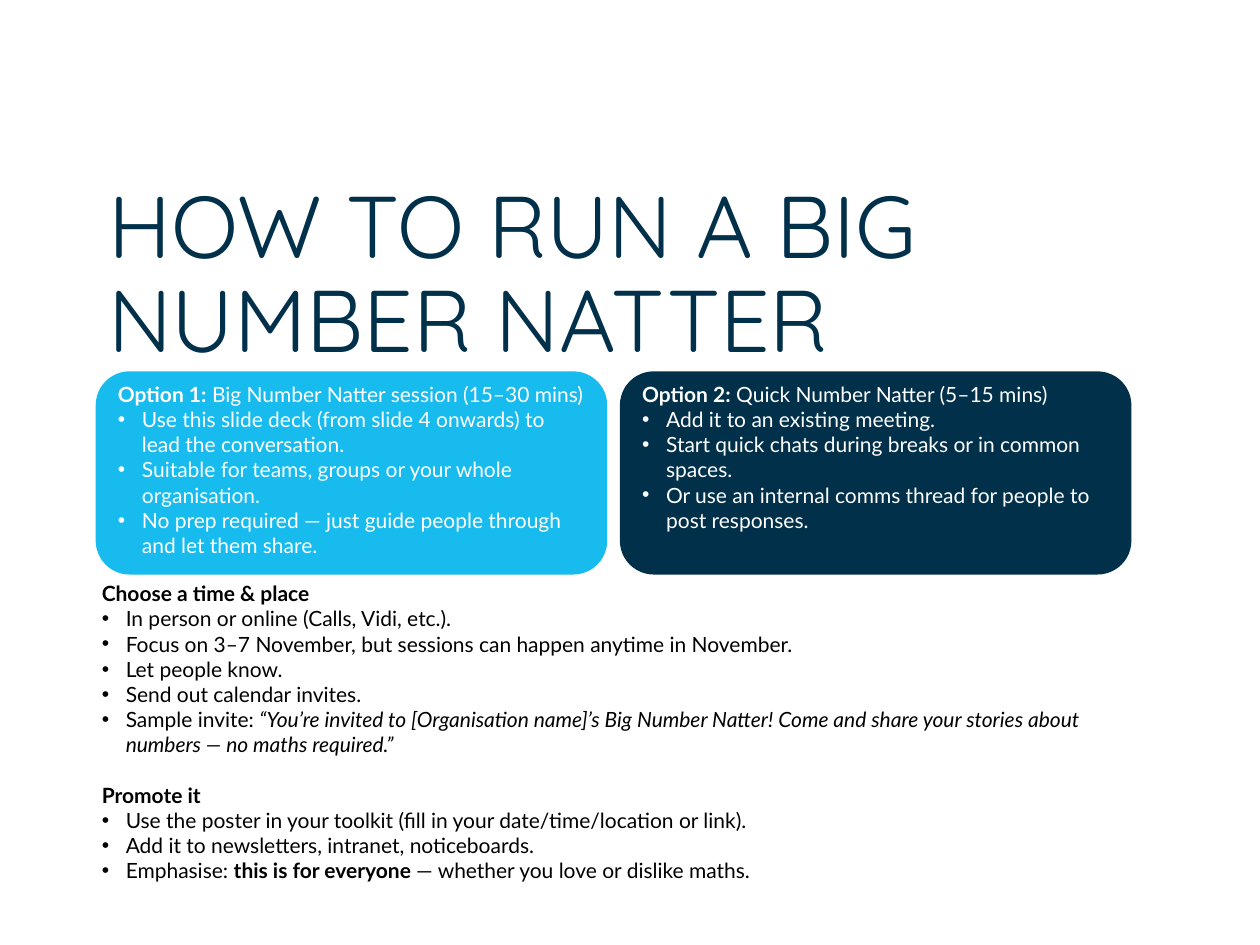
import pptx
import pptx.util
import pptx.dml.color
import pptx.enum.shapes
import pptx.enum.text
import pptx.oxml.ns
import lxml.etree

WIDE, HIGH = 10, 7.5
LEFT, TOP = 0.076, 0.393  # first card, as shares of the slide
CARD, GAP, DEEP = 0.406, 0.01, 0.215
HUES = {"navy": "00304A", "deep": "01304A", "sky": "17BBEE",
        "white": "FFFFFF", "black": "000000"}

# Each paragraph is a list of (text, style) runs; "b" is bold, "i" italic.
CARDS = [
    ("sky", [("Option 1:", "b"), (" Big Number Natter session (15–30 mins)", "")],
     ["Use this slide deck (from slide 4 onwards) to lead the conversation.",
      "Suitable for teams, groups or your whole organisation.",
      "No prep required — just guide people through and let them share."]),
    ("deep", [("Option 2:", "b"), (" Quick Number Natter (5–15 mins)", "")],
     ["Add it to an existing meeting.",
      "Start quick chats during breaks or in common spaces.",
      "Or use an internal comms thread for people to post responses."]),
]
STEPS = [
    ([("Choose a time & place", "b")],
     ["In person or online (Calls, Vidi, etc.).",
      "Focus on 3–7 November, but sessions can happen anytime in November.",
      "Let people know.",
      "Send out calendar invites.",
      [("Sample invite: ", ""),
       ("“You’re invited to [Organisation name]’s Big Number Natter! Come and "
        "share your stories about numbers — no maths required.”", "i")]]),
    ([("Promote it", "b")],
     ["Use the poster in your toolkit (fill in your date/time/location or link).",
      "Add it to newsletters, intranet, noticeboards.",
      [("Emphasise: ", ""), ("this is for everyone ", "b"),
       ("— whether you love or dislike maths.", "")]]),
]


def paint(name):
    return pptx.dml.color.RGBColor.from_string(HUES[name])


def place(x, y, w, h):
    """Turn shares of the slide into lengths."""
    return [pptx.util.Inches(n * side)
            for n, side in zip((x, y, w, h), (WIDE, HIGH) * 2)]


def mark(para):
    """Give a paragraph a hanging bullet."""
    props = para._p.get_or_add_pPr()
    hang = pptx.util.Inches(0.19)
    props.set("marL", str(hang))
    props.set("indent", str(-hang))
    tags = [("buFont", "typeface", "Arial"), ("buChar", "char", "•")]
    for tag, key, value in tags:
        item = lxml.etree.SubElement(props, pptx.oxml.ns.qn("a:" + tag))
        item.set(key, value)


def write(frame, runs, size=12, font="Lato", hue="black", dot=False,
          before=0, line=None):
    """Add one paragraph, using the frame's empty first one if it is free."""
    para = frame.paragraphs[0]
    if para.runs:
        para = frame.add_paragraph()
    if dot:
        mark(para)
    para.alignment = pptx.enum.text.PP_ALIGN.LEFT
    para.space_before = pptx.util.Pt(before)
    if line:
        para.line_spacing = line
    for text, style in [(runs, "")] if isinstance(runs, str) else runs:
        run = para.add_run()
        run.text = text
        run.font.size = pptx.util.Pt(size)
        run.font.name = font
        run.font.color.rgb = paint(hue)
        run.font.bold = style == "b"
        run.font.italic = style == "i"


def block(frame, head, items, before=0, hue="black"):
    """Write a heading and its bullets."""
    write(frame, head, before=before, hue=hue)
    for item in items:
        write(frame, item, dot=True, hue=hue)


def box(slide, *share):
    frame = slide.shapes.add_textbox(*place(*share)).text_frame
    frame.word_wrap = True
    return frame


def card(slide, col, fill, head, items):
    kind = pptx.enum.shapes.MSO_SHAPE.ROUNDED_RECTANGLE
    spot = place(LEFT + col * (CARD + GAP), TOP, CARD, DEEP)
    shape = slide.shapes.add_shape(kind, *spot)
    shape.shadow.inherit = False
    shape.fill.solid()
    shape.fill.fore_color.rgb = paint(fill)
    shape.line.fill.background()
    frame = shape.text_frame
    frame.word_wrap = True
    frame.margin_top = 0
    frame.vertical_anchor = pptx.enum.text.MSO_ANCHOR.TOP
    block(frame, head, items, hue="white")


def main():
    deck = pptx.Presentation()
    deck.slide_width = pptx.util.Inches(WIDE)
    deck.slide_height = pptx.util.Inches(HIGH)
    slide = deck.slides.add_slide(deck.slide_layouts[6])

    title = box(slide, LEFT, 0.23, 0.85, 0.127)
    title.vertical_anchor = pptx.enum.text.MSO_ANCHOR.MIDDLE
    write(title, "HOW TO RUN A BIG NUMBER NATTER", size=50,
          font="Quicksand", hue="navy", line=0.9)

    steps = box(slide, 0.071, TOP + DEEP, 0.857, 0.39)
    for row, (head, items) in enumerate(STEPS):
        block(steps, head, items, before=14.4 if row else 0)

    for col, (fill, head, items) in enumerate(CARDS):
        card(slide, col, fill, head, items)
    deck.save("out.pptx")


if __name__ == "__main__":
    main()
